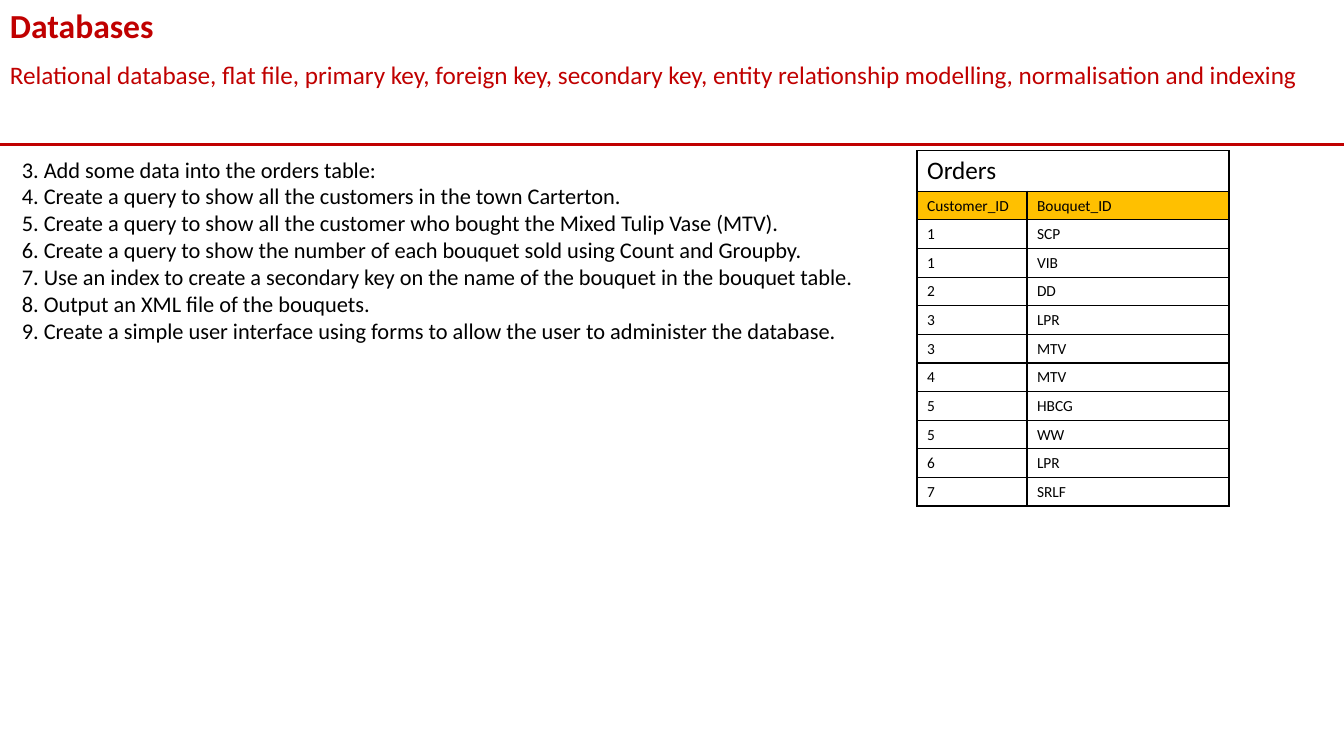
from lxml import etree
from pptx import Presentation
from pptx.dml.color import RGBColor
from pptx.enum.shapes import MSO_CONNECTOR
from pptx.enum.text import MSO_ANCHOR
from pptx.oxml.ns import qn
from pptx.util import Cm, Pt

STRAIGHT = MSO_CONNECTOR.STRAIGHT
MIDDLE, TOP = MSO_ANCHOR.MIDDLE, MSO_ANCHOR.TOP
FONT = "Calibri"
RED, BLACK, WHITE, AMBER = "C00000", "000000", "FFFFFF", "FFC000"
SLIDE_WIDTH, SLIDE_HEIGHT = 33.87, 19.05

TITLE = "Databases"
TOPICS = ("Relational database, flat file, primary key, foreign key, secondary key, "
          "entity relationship modelling, normalisation and indexing")
FIRST_TASK = 3
TASKS = [
    "Add some data into the orders table:",
    "Create a query to show all the customers in the town Carterton.",
    "Create a query to show all the customer who bought the Mixed Tulip Vase (MTV).",
    "Create a query to show the number of each bouquet sold using Count and Groupby.",
    "Use an index to create a secondary key on the name of the bouquet in the bouquet table.",
    "Output an XML file of the bouquets.",
    "Create a simple user interface using forms to allow the user to administer the database.",
]
ORDER_FIELDS = ("Customer_ID", "Bouquet_ID")
ORDERS = [("1", "SCP"), ("1", "VIB"), ("2", "DD"), ("3", "LPR"), ("3", "MTV"),
          ("4", "MTV"), ("5", "HBCG"), ("5", "WW"), ("6", "LPR"), ("7", "SRLF")]


def color(hex_value):
    return RGBColor.from_string(hex_value)


def format_text(frame, size, hex_value, bold=False):
    for paragraph in frame.paragraphs:
        for run in paragraph.runs:
            run.font.name = FONT
            run.font.size = Pt(size)
            run.font.bold = bold
            run.font.color.rgb = color(hex_value)


def add_text(slide, box, text, size, hex_value, bold=False):
    frame = slide.shapes.add_textbox(*map(Cm, box)).text_frame
    frame.word_wrap = True
    frame.text = text
    format_text(frame, size, hex_value, bold)


def add_header(slide, left, top, width, height):
    # Title and topics, closed off by a red rule
    add_text(slide, (left, top, width, 1.28), TITLE, 24, RED, bold=True)
    add_text(slide, (left, top + 1.36, width, 1.03), TOPICS, 18, RED)
    bottom = top + height
    rule = slide.shapes.add_connector(
        STRAIGHT, Cm(left), Cm(bottom), Cm(left + width), Cm(bottom))
    rule.line.color.rgb = color(RED)
    rule.line.width = Pt(2.25)
    etree.SubElement(rule._element.spPr, qn("a:effectLst"))


def add_tasks(slide, left, top, width, height):
    lines = [f"{number}. {task}" for number, task in enumerate(TASKS, FIRST_TASK)]
    add_text(slide, (left, top, width, height), "\n".join(lines), 16, BLACK)


def add_borders(cell):
    properties = cell._tc.get_or_add_tcPr()
    for side in ("a:lnL", "a:lnR", "a:lnT", "a:lnB"):
        border = etree.SubElement(properties, qn(side), w=str(Pt(1)))
        fill = etree.SubElement(border, qn("a:solidFill"))
        etree.SubElement(fill, qn("a:srgbClr"), val=BLACK)


def fill_cell(cell, text, size, background, anchor):
    add_borders(cell)
    cell.fill.solid()
    cell.fill.fore_color.rgb = color(background)
    cell.vertical_anchor = anchor
    cell.text = text
    format_text(cell.text_frame, size, BLACK)


def add_orders(slide, left, top, width, height):
    rows = [("Orders", ""), ORDER_FIELDS, *ORDERS]
    title_height, customer_width = 1.02, 2.77
    row_height = (height - title_height) / (len(rows) - 1)
    table = slide.shapes.add_table(
        len(rows), len(ORDER_FIELDS), Cm(left), Cm(top), Cm(width), Cm(height)).table
    table.columns[0].width = Cm(customer_width)
    table.columns[1].width = Cm(width - customer_width)

    # Name row, amber field row, then the records
    for index, values in enumerate(rows):
        table.rows[index].height = Cm(row_height if index else title_height)
        size = 11 if index else 18
        background = AMBER if index == 1 else WHITE
        anchor = MIDDLE if index < 2 else TOP
        for column, value in enumerate(values):
            fill_cell(table.cell(index, column), value, size, background, anchor)
    table.cell(0, 0).merge(table.cell(0, 1))


def main():
    deck = Presentation()
    deck.slide_width, deck.slide_height = Cm(SLIDE_WIDTH), Cm(SLIDE_HEIGHT)
    slide = deck.slides.add_slide(deck.slide_layouts[6])
    add_header(slide, 0, 0, SLIDE_WIDTH, 3.65)
    add_tasks(slide, 0.3, 3.8, 22.8, 6.4)
    add_orders(slide, 23.11, 3.8, 7.86, 8.95)
    deck.save("out.pptx")


if __name__ == "__main__":
    main()
